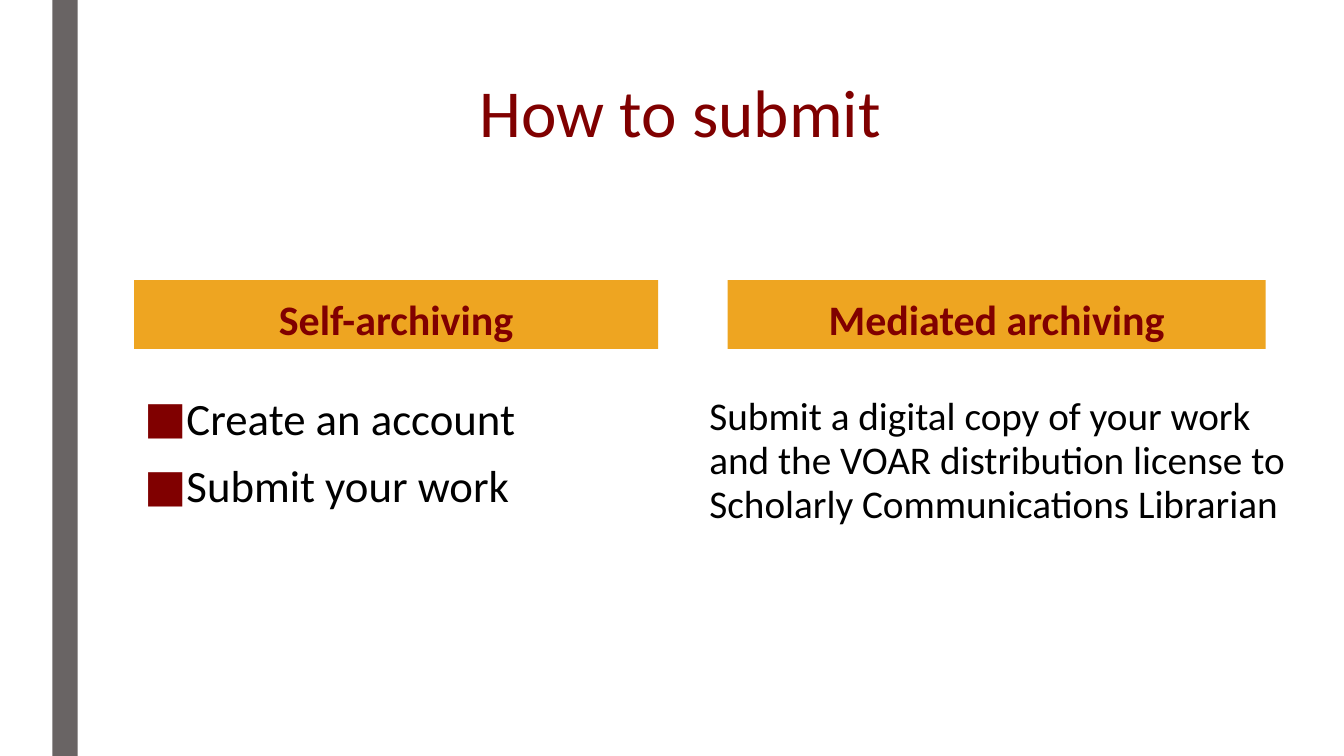
from dataclasses import dataclass

from lxml import etree
from pptx import Presentation
from pptx.dml.color import RGBColor
from pptx.enum import shapes, text
from pptx.oxml.ns import qn
from pptx.slide import Slide
from pptx.util import Cm, Pt

COLORS = {
    "maroon": "800000",
    "gold": "EEA521",
    "grey": "696464",
    "white": "FFFFFF",
    "black": "000000",
}
FONT = "Calibri"
BULLET = "■"
BULLET_INDENT = Cm(1.07)
HEADING_TOP, HEADING_HEIGHT = 7.06, 1.73
BODY_TOP, BODY_HEIGHT = 9.83, 7.11


@dataclass(frozen=True)
class Box:
    """Position and size in centimetres."""
    left: float
    top: float
    width: float
    height: float


@dataclass(frozen=True)
class Style:
    size: float
    color: str
    line_spacing: float
    bold: bool = False
    centered: bool = False
    anchor: text.MSO_ANCHOR = text.MSO_ANCHOR.TOP
    before: float = 0
    after: float = 0
    bulleted: bool = False


@dataclass(frozen=True)
class Block:
    """Paragraphs in a box; each paragraph is a tuple of lines."""
    box: Box
    paragraphs: tuple[tuple[str, ...], ...]
    style: Style
    fill: str | None = None


TITLE = Style(48, "maroon", 0.89, centered=True)
HEADING = Style(30, "maroon", 0.84, bold=True, centered=True,
                anchor=text.MSO_ANCHOR.BOTTOM)
STEPS = Style(32, "black", 0.94, before=10, after=2, bulleted=True)
EXPLANATION = Style(28, "black", 0.94, before=10, after=2)

BLOCKS = (
    Block(Box(3.81, 1.9, 26.67, 4.11), (("How to submit",),), TITLE, "white"),
    Block(Box(3.38, HEADING_TOP, 13.21, HEADING_HEIGHT),
          (("Self-archiving",),), HEADING, "gold"),
    Block(Box(3.38, BODY_TOP, 12.34, BODY_HEIGHT),
          (("Create an account",), ("Submit your work",)), STEPS),
    Block(Box(18.34, HEADING_TOP, 13.56, HEADING_HEIGHT),
          (("Mediated archiving",),), HEADING, "gold"),
    Block(Box(17.63, BODY_TOP, 16.43, BODY_HEIGHT),
          (("Submit a digital copy of your work ",
            "and the VOAR distribution license to "
            "Scholarly Communications Librarian"),), EXPLANATION),
)


def rgb(name: str) -> RGBColor:
    return RGBColor.from_string(COLORS[name])


def add_rectangle(slide: Slide, box: Box, fill: str | None):
    """Add a filled rectangle, or a text box when there is no fill."""
    place = Cm(box.left), Cm(box.top), Cm(box.width), Cm(box.height)
    if fill is None:
        return slide.shapes.add_textbox(*place)
    rectangle = slide.shapes.add_shape(shapes.MSO_SHAPE.RECTANGLE, *place)
    rectangle.shadow.inherit = False
    rectangle.fill.solid()
    rectangle.fill.fore_color.rgb = rgb(fill)
    rectangle.line.fill.background()
    return rectangle


def add_bullet(paragraph) -> None:
    properties = paragraph._p.get_or_add_pPr()
    properties.set("marL", str(BULLET_INDENT))
    properties.set("indent", str(-BULLET_INDENT))
    color = etree.SubElement(properties, qn("a:buClr"))
    etree.SubElement(color, qn("a:srgbClr"), val=COLORS["maroon"])
    etree.SubElement(properties, qn("a:buFont"), typeface=FONT)
    etree.SubElement(properties, qn("a:buChar"), char=BULLET)


def add_block(slide: Slide, block: Block) -> None:
    style = block.style
    frame = add_rectangle(slide, block.box, block.fill).text_frame
    frame.word_wrap = True
    frame.vertical_anchor = style.anchor
    for index, lines in enumerate(block.paragraphs):
        paragraph = frame.add_paragraph() if index else frame.paragraphs[0]
        paragraph.alignment = (text.PP_ALIGN.CENTER if style.centered
                               else text.PP_ALIGN.LEFT)
        paragraph.line_spacing = style.line_spacing
        paragraph.space_before = Pt(style.before)
        paragraph.space_after = Pt(style.after)
        if style.bulleted:
            add_bullet(paragraph)
        for number, line in enumerate(lines):
            if number:
                paragraph.add_line_break()
            run = paragraph.add_run()
            run.text = line
            run.font.name = FONT
            run.font.size = Pt(style.size)
            run.font.bold = style.bold
            run.font.color.rgb = rgb(style.color)


def main() -> None:
    deck = Presentation()
    deck.slide_width, deck.slide_height = Cm(33.87), Cm(19.05)
    slide = deck.slides.add_slide(deck.slide_layouts[6])
    add_rectangle(slide, Box(1.32, 0, 0.64, 19.05), "grey")
    for block in BLOCKS:
        add_block(slide, block)
    deck.save("out.pptx")


if __name__ == "__main__":
    main()
